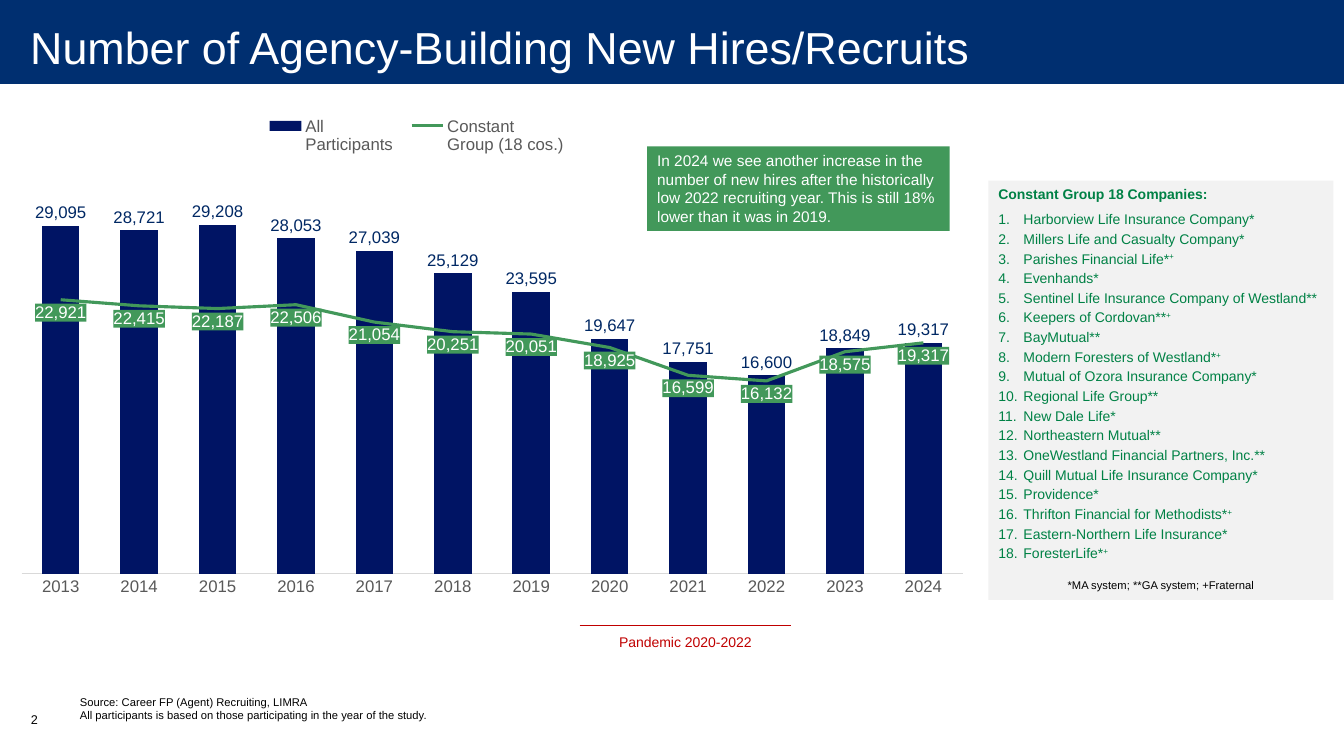
from lxml import etree
from pptx import Presentation
from pptx.chart.data import CategoryChartData
from pptx.dml.color import RGBColor
from pptx.enum.chart import XL_CHART_TYPE, XL_LABEL_POSITION, XL_LEGEND_POSITION, XL_MARKER_STYLE, XL_TICK_MARK
from pptx.enum.shapes import MSO_CONNECTOR, MSO_SHAPE
from pptx.enum.text import MSO_ANCHOR, MSO_AUTO_SIZE, PP_ALIGN
from pptx.oxml import parse_xml
from pptx.oxml.ns import nsdecls, qn
from pptx.util import Pt

FONT = "Arial"
COLORS = {
    "band": "002F70", "white": "FFFFFF", "black": "000000", "bar": "001464",
    "bar_label": "002864", "green": "42985A", "list": "008145", "panel": "F2F2F2",
    "axis_text": "595959", "axis_line": "D9D9D9", "red": "C00000",
}
YEARS = [str(y) for y in range(2013, 2025)]
ALL_HIRES = [29095, 28721, 29208, 28053, 27039, 25129, 23595, 19647, 17751, 16600, 18849, 19317]
GROUP_HIRES = [22921, 22415, 22187, 22506, 21054, 20251, 20051, 18925, 16599, 16132, 18575, 19317]
# A closing + is set as a superscript
COMPANIES = [
    "Harborview Life Insurance Company*", "Millers Life and Casualty Company*",
    "Parishes Financial Life*+", "Evenhands*",
    "Sentinel Life Insurance Company of Westland**", "Keepers of Cordovan**+",
    "BayMutual**", "Modern Foresters of Westland*+", "Mutual of Ozora Insurance Company*",
    "Regional Life Group**", "New Dale Life*", "Northeastern Mutual**",
    "OneWestland Financial Partners, Inc.**", "Quill Mutual Life Insurance Company*",
    "Providence*", "Thrifton Financial for Methodists*+",
    "Eastern-Northern Life Insurance*", "ForesterLife*+",
]


def rgb(name):
    return RGBColor.from_string(COLORS[name])


def style(font, size, color, bold=False):
    font.name, font.size, font.bold = FONT, Pt(size), bold
    font.color.rgb = rgb(color)


def add_run(p, text, size, color, bold=False):
    r = p.add_run()
    r.text = text
    style(r.font, size, color, bold)
    return r


def add_rect(s, box, color):
    sp = s.shapes.add_shape(MSO_SHAPE.RECTANGLE, *map(Pt, box))
    sp.shadow.inherit = False
    sp.fill.solid()
    sp.fill.fore_color.rgb = rgb(color)
    sp.line.fill.background()
    tf = sp.text_frame
    tf.word_wrap = True
    tf.vertical_anchor = MSO_ANCHOR.TOP
    return sp


def add_text(s, box, lines, size, color, align=PP_ALIGN.LEFT, anchor=MSO_ANCHOR.TOP):
    tf = s.shapes.add_textbox(*map(Pt, box)).text_frame
    tf.word_wrap = True
    tf.vertical_anchor = anchor
    for i, line in enumerate(lines):
        p = tf.add_paragraph() if i else tf.paragraphs[0]
        p.alignment = align
        add_run(p, line, size, color)


def add_title(s, box, text):
    left, top, width, height = box
    band = add_rect(s, (left, top, width, height - 8), "band")
    s.shapes._spTree.insert(2, band._element)
    title = s.shapes.title
    title.left, title.top, title.width, title.height = map(Pt, box)
    tf = title.text_frame
    tf.auto_size = MSO_AUTO_SIZE.NONE
    tf.word_wrap = True
    tf.vertical_anchor = MSO_ANCHOR.MIDDLE
    tf.margin_left, tf.margin_right = Pt(21.6), Pt(14.4)
    tf.margin_top = tf.margin_bottom = 0
    p = tf.paragraphs[0]
    p.alignment = PP_ALIGN.LEFT
    add_run(p, text, 32, "white")


def layout_xml(x, y, w, h, inner=False):
    target = '<c:layoutTarget val="inner"/>' if inner else ""
    return parse_xml(
        f'<c:layout {nsdecls("c")}><c:manualLayout>{target}<c:xMode val="edge"/><c:yMode val="edge"/>'
        f'<c:x val="{x}"/><c:y val="{y}"/><c:w val="{w}"/><c:h val="{h}"/></c:manualLayout></c:layout>')


def move_last_series_to_line(chart):
    bars = chart.plots[0]._element
    ser = bars.findall(qn("c:ser"))[-1]
    for tag in ser.findall(qn("c:invertIfNegative")):
        ser.remove(tag)
    lines = parse_xml(f'<c:lineChart {nsdecls("c")}><c:grouping val="standard"/>'
                      '<c:varyColors val="0"/></c:lineChart>')
    bars.addnext(lines)
    lines.append(ser)
    etree.SubElement(lines, qn("c:marker")).set("val", "1")
    for ax in bars.findall(qn("c:axId")):
        etree.SubElement(lines, qn("c:axId")).set("val", ax.get("val"))


def add_labels(series, color, position):
    labels = series.data_labels
    labels.show_value = True
    labels.number_format, labels.number_format_is_linked = "#,##0", False
    labels.position = position
    style(labels.font, 12, color)
    return labels


def add_hires_chart(s, box):
    data = CategoryChartData(number_format="#,##0")
    data.categories = YEARS
    data.add_series("All\nParticipants", ALL_HIRES)
    data.add_series("Constant\nGroup (18 cos.)", GROUP_HIRES)
    chart = s.shapes.add_chart(XL_CHART_TYPE.COLUMN_CLUSTERED, *map(Pt, box), data).chart
    style(chart.font, 10, "black")
    chart.has_title = False
    move_last_series_to_line(chart)

    # Columns
    bars = chart.plots[0]
    bars.gap_width, bars.vary_by_categories = 109, False
    columns = bars.series[0]
    columns.format.fill.solid()
    columns.format.fill.fore_color.rgb = rgb("bar")
    add_labels(columns, "bar_label", XL_LABEL_POSITION.OUTSIDE_END)

    # Line with filled labels
    group = chart.plots[1].series[0]
    group.smooth = False
    group.marker.style = XL_MARKER_STYLE.NONE
    group.format.line.color.rgb = rgb("green")
    group.format.line.width = Pt(2.25)
    labels = add_labels(group, "white", XL_LABEL_POSITION.BELOW)
    labels._element.find(qn("c:txPr")).addprevious(parse_xml(
        f'<c:spPr {nsdecls("c", "a")}><a:solidFill><a:srgbClr val="{COLORS["green"]}"/>'
        '</a:solidFill></c:spPr>'))

    # Axes
    years, values = chart.category_axis, chart.value_axis
    years.major_tick_mark = years.minor_tick_mark = XL_TICK_MARK.NONE
    style(years.tick_labels.font, 12, "axis_text")
    years.format.line.color.rgb = rgb("axis_line")
    years.format.line.width = Pt(0.75)
    values.minimum_scale, values.maximum_scale, values.major_unit = 0, 35000, 5000
    values.has_major_gridlines = False
    values.visible = False

    # Legend and plot area
    chart.has_legend = True
    legend = chart.legend
    legend.position, legend.include_in_layout = XL_LEGEND_POSITION.TOP, False
    style(legend.font, 12, "axis_text")
    for old in legend._element.findall(qn("c:layout")):
        legend._element.remove(old)
    legend._element.find(qn("c:legendPos")).addnext(layout_xml(0.25, 0.01, 0.34, 0.09))
    plot_area = bars._element.getparent()
    for old in plot_area.findall(qn("c:layout")):
        plot_area.remove(old)
    plot_area.insert(0, layout_xml(0, 0.095, 1, 0.835, inner=True))


def add_callout(s, box, text):
    p = add_rect(s, box, "green").text_frame.paragraphs[0]
    p.alignment = PP_ALIGN.LEFT
    add_run(p, text, 11, "white")


def add_company_panel(s, box):
    tf = add_rect(s, box, "panel").text_frame
    p = tf.paragraphs[0]
    p.alignment, p.space_after = PP_ALIGN.LEFT, Pt(6)
    add_run(p, "Constant Group 18 Companies:", 10, "list", bold=True)
    for company in COMPANIES:
        p = tf.add_paragraph()
        p.alignment, p.line_spacing = PP_ALIGN.LEFT, Pt(10)
        p.space_before = p.space_after = Pt(2)
        pPr = p._p.get_or_add_pPr()
        pPr.set("marL", str(Pt(18)))
        pPr.set("indent", str(-Pt(18)))
        etree.SubElement(pPr, qn("a:buFont")).set("typeface", "+mj-lt")
        etree.SubElement(pPr, qn("a:buAutoNum")).set("type", "arabicPeriod")
        add_run(p, company.rstrip("+"), 10, "list")
        if company.endswith("+"):
            add_run(p, "+", 10, "list").font._element.set("baseline", "30000")
    p = tf.add_paragraph()
    p.alignment, p.space_before = PP_ALIGN.CENTER, Pt(10)
    add_run(p, "*MA system; **GA system; +Fraternal", 8, "black")


def add_pandemic_mark(s, box):
    left, top, width, height = box
    line = s.shapes.add_connector(MSO_CONNECTOR.STRAIGHT, Pt(left), Pt(top), Pt(left + width), Pt(top))
    line.line.color.rgb = rgb("red")
    line.line.width = Pt(0.75)
    etree.SubElement(line._element.spPr, qn("a:effectLst"))
    add_text(s, (left, top + 2, width, height - 2), ["Pandemic 2020-2022"], 10, "red", PP_ALIGN.CENTER)


def add_footer(s, box):
    left, top, width, height = box
    add_text(s, (left + 35, top, width - 35, 35.3),
             ["Source: Career FP (Agent) Recruiting, LIMRA",
              "All participants is based on those participating in the year of the study."],
             8, "black", anchor=MSO_ANCHOR.BOTTOM)
    add_text(s, (left, top + 21, 35, height - 21), ["2"], 9, "black")


def main():
    prs = Presentation()
    prs.slide_width, prs.slide_height = Pt(960), Pt(540)
    s = prs.slides.add_slide(prs.slide_layouts[5])
    add_title(s, (0, -2, 960, 70), "Number of Agency-Building New Hires/Recruits")
    add_hires_chart(s, (15, 77, 673, 358))
    add_callout(s, (462.3, 104.5, 216, 60.5),
                "In 2024 we see another increase in the number of new hires after the historically "
                "low 2022 recruiting year. This is still 18% lower than it was in 2019.")
    add_company_panel(s, (706, 129, 246.5, 299.5))
    add_pandemic_mark(s, (414, 447, 151, 21.5))
    add_footer(s, (15, 484, 456, 50))
    prs.save("out.pptx")


if __name__ == "__main__":
    main()
